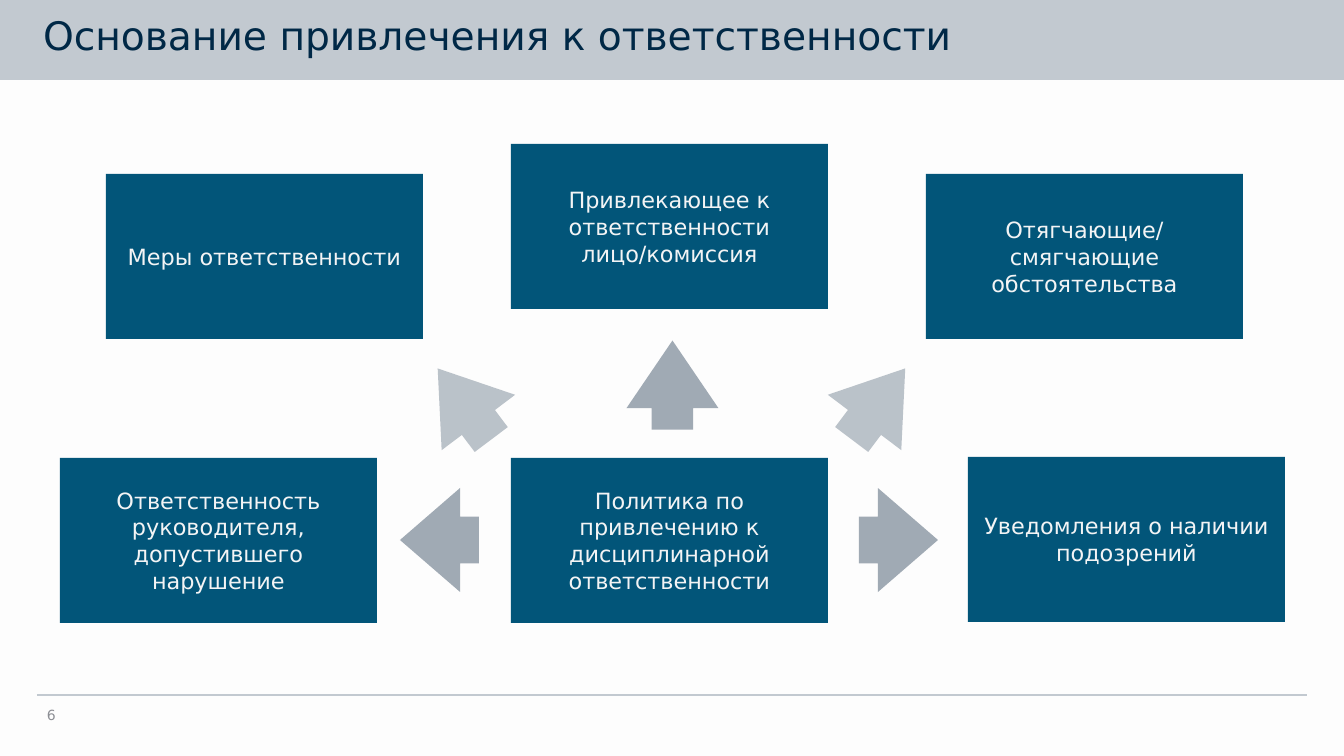
from lxml.etree import SubElement
from pptx import Presentation
from pptx.dml.color import RGBColor
from pptx.enum.shapes import MSO_CONNECTOR, MSO_SHAPE
from pptx.enum.text import MSO_ANCHOR, MSO_AUTO_SIZE, PP_ALIGN
from pptx.oxml.ns import qn
from pptx.util import Pt

SCALE = 914400 / 100.8
FONT = "DejaVu Sans"
BAND, NAVY, BLUE, PALE, GREY = "C2C9D0", "002846", "025579", "F3F4F5", "A0AAB4"
BOX_W, BOX_H = 317, 165

# left, top, wording
BOXES = [
    (511, 458, "Политика по привлечению к дисциплинарной ответственности"),
    (511, 144, "Привлекающее к ответственности лицо/комиссия"),
    (60, 458, "Ответственность руководителя, допустившего нарушение"),
    (926, 174, "Отягчающие/\vсмягчающие обстоятельства"),
    (106, 174, "Меры ответственности"),
    (968, 457, "Уведомления о наличии подозрений"),
]

# left, top, width, height, turn, opacity in percent
ARROWS = [
    (400, 488, 79, 104, 180, 100),
    (628, 339, 89, 92, 270, 100),
    (859, 488, 79, 104, 0, 100),
    (420, 358, 89, 92, 233, 71),
    (834, 358, 89, 92, 307, 71),
]


def px(*sizes):
    return [round(size * SCALE) for size in sizes]


def color(code):
    return RGBColor.from_string(code)


def write(shape, text, size, ink, align=PP_ALIGN.LEFT):
    frame = shape.text_frame
    frame.word_wrap = True
    frame.auto_size = MSO_AUTO_SIZE.NONE
    frame.vertical_anchor = MSO_ANCHOR.MIDDLE
    frame.text = text
    para = frame.paragraphs[0]
    para.alignment = align
    para.font.name = FONT
    para.font.size = Pt(size)
    para.font.color.rgb = color(ink)
    return para


def add_shape(slide, kind, place, fill):
    shape = slide.shapes.add_shape(kind, *px(*place))
    shape.shadow.inherit = False
    shape.fill.solid()
    shape.fill.fore_color.rgb = color(fill)
    shape.line.fill.background()
    return shape


def add_title(slide, text):
    # The band goes behind the title
    band = add_shape(slide, MSO_SHAPE.RECTANGLE, (0, 0, 1344, 80), BAND)
    slide.shapes._spTree.insert(2, band._element)
    title = slide.shapes.title
    title.left, title.top, title.width, title.height = px(0, -1, 1344, 80)
    para = write(title, text, 28, NAVY)
    para.line_spacing = 0.85
    frame = title.text_frame
    frame.margin_left, frame.margin_right = px(43, 4)
    frame.margin_top, frame.margin_bottom = px(4, 4)


def add_foot(slide, number):
    rule = slide.shapes.add_connector(
        MSO_CONNECTOR.STRAIGHT, *px(37, 695, 1307, 695))
    rule.line.color.rgb = color(BAND)
    rule.line.width = Pt(1.5)
    SubElement(rule._element.spPr, qn("a:effectLst"))
    label = slide.shapes.add_textbox(*px(37, 702, 169, 26))
    write(label, number, 10, "8C8E94")


def add_box(slide, left, top, text):
    box = add_shape(slide, MSO_SHAPE.RECTANGLE, (left, top, BOX_W, BOX_H), BLUE)
    write(box, text, 16, PALE, PP_ALIGN.CENTER)


def add_arrow(slide, left, top, width, height, turn, opacity):
    arrow = add_shape(
        slide, MSO_SHAPE.RIGHT_ARROW, (left, top, width, height), GREY)
    arrow.adjustments[0] = 0.45
    arrow.adjustments[1] = 0.76
    arrow.rotation = turn
    if opacity < 100:
        fill = arrow._element.spPr.find(qn("a:solidFill"))
        SubElement(fill[0], qn("a:alpha"), val=str(opacity * 1000))


def main():
    deck = Presentation()
    deck.slide_width, deck.slide_height = px(1344, 756)
    slide = deck.slides.add_slide(deck.slide_layouts[5])
    slide.background.fill.solid()
    slide.background.fill.fore_color.rgb = color("FDFDFD")

    # Heading and footer
    add_title(slide, "Основание привлечения к ответственности")
    add_foot(slide, "6")

    # Policy in the centre, with arrows to its five topics
    for box in BOXES:
        add_box(slide, *box)
    for arrow in ARROWS:
        add_arrow(slide, *arrow)

    deck.save("out.pptx")


if __name__ == "__main__":
    main()
